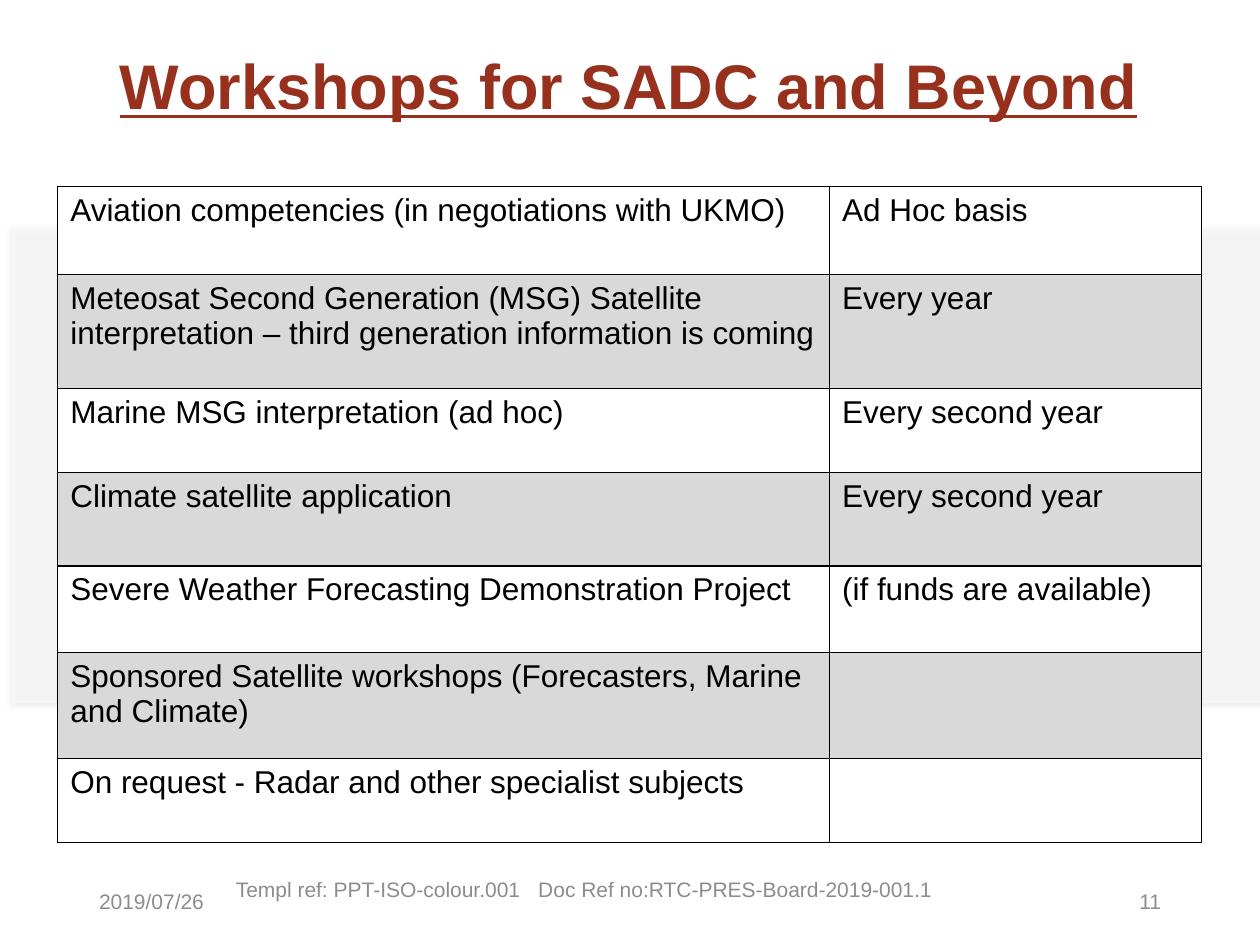
from lxml import etree
from pptx import Presentation
from pptx.dml.color import RGBColor
from pptx.enum import shapes, text
from pptx.oxml import ns, parse_xml
from pptx.util import Pt

TITLE = "Workshops for SADC and Beyond"
WORKSHOPS = [  # workshop, frequency, row height
    ("Aviation competencies (in negotiations with UKMO)", "Ad Hoc basis", 50.5),
    ("Meteosat Second Generation (MSG) Satellite interpretation"
     " – third generation information is coming", "Every year", 65),
    ("Marine MSG interpretation (ad hoc)", "Every second year", 48),
    ("Climate satellite application", "Every second year", 53.5),
    ("Severe Weather Forecasting Demonstration Project",
     "(if funds are available)", 49.5),
    ("Sponsored Satellite workshops (Forecasters, Marine and Climate)", "", 60.5),
    ("On request - Radar and other specialist subjects", "", 48),
]
COLUMNS = (441, 212.5)
BANDS = ("FFFFFF", "D9D9D9")
LEFT, CENTER, RIGHT = (text.PP_ALIGN.LEFT, text.PP_ALIGN.CENTER,
                       text.PP_ALIGN.RIGHT)
FOOTERS = [  # text pieces, left, top, width, alignment
    (["2019/07/26"], 49.5, 500.5, 162, LEFT),
    (["Templ ref: PPT-ISO-colour.001", "Doc Ref no:RTC-PRES-Board-2019-001.1"],
     121, 493.5, 425.5, CENTER),
    (["11"], 508.5, 500.5, 162, RIGHT),
]
PIECE_GAP = 6.7  # points added to the space between two footer pieces
SHADOW = (
    f'<a:effectLst {ns.nsdecls("a")}>'
    '<a:outerShdw blurRad="39370" dist="22860" dir="5400000" rotWithShape="0">'
    '<a:srgbClr val="808080"><a:alpha val="35000"/></a:srgbClr>'
    '</a:outerShdw></a:effectLst>')


def color(value):
    return RGBColor.from_string(value)


def format_font(font, size, shade, **values):
    font.color.rgb = color(shade)
    for name, value in dict(values, size=Pt(size), name="Arial").items():
        setattr(font, name, value)


def place(shape, left, top, width, height):
    for name, value in zip(("left", "top", "width", "height"),
                           (left, top, width, height)):
        setattr(shape, name, Pt(value))


def add_panel(page):
    panel = page.shapes.add_shape(shapes.MSO_SHAPE.RECTANGLE, Pt(6.5), Pt(129),
                                  Pt(720), Pt(273))
    panel.fill.solid()
    panel.fill.fore_color.rgb = color("FFFFFF")
    panel.line.fill.background()
    properties = panel._element.spPr
    fill = properties.find(ns.qn("a:solidFill"))
    etree.SubElement(fill[0], ns.qn("a:alpha"), val="38000")
    properties.append(parse_xml(SHADOW))


def add_title(page):
    title = page.shapes.title
    place(title, 49, 8.5, 620.5, 65.5)
    title.text_frame.text = TITLE
    title.text_frame.vertical_anchor = text.MSO_ANCHOR.BOTTOM
    para = title.text_frame.paragraphs[0]
    para.alignment = CENTER
    para.line_spacing = 0.9
    format_font(para.runs[0].font, 36, "97301D", bold=True, underline=True)


def add_footer(page, pieces, left, top, width, alignment):
    box = page.shapes.add_textbox(Pt(left), Pt(top), Pt(width), Pt(29))
    frame = box.text_frame
    frame.word_wrap = True
    frame.vertical_anchor = text.MSO_ANCHOR.MIDDLE
    para = frame.paragraphs[0]
    para.alignment = alignment
    for index, piece in enumerate(pieces):
        if index:
            gap = para.add_run()
            gap.text = " "
            format_font(gap.font, 12, "8C8C8C")
            gap._r.get_or_add_rPr().set("spc", str(int(PIECE_GAP * 100)))
        span = para.add_run()
        span.text = piece
        format_font(span.font, 12, "8C8C8C")


def add_borders(cell):
    """Draw a one-point black line on each side; lines precede the fill."""
    properties = cell._tc.get_or_add_tcPr()
    for index, side in enumerate(("lnL", "lnR", "lnT", "lnB")):
        properties.insert(index, parse_xml(
            f'<a:{side} {ns.nsdecls("a")} w="12700"><a:solidFill>'
            f'<a:srgbClr val="000000"/></a:solidFill></a:{side}>'))


def add_workshops(page):
    height = sum(row[-1] for row in WORKSHOPS)
    table = page.shapes.add_table(len(WORKSHOPS), len(COLUMNS), Pt(33), Pt(106.5),
                                  Pt(sum(COLUMNS)), Pt(height)).table
    for name in ("first_row", "horz_banding"):
        setattr(table, name, False)
    for column, width in zip(table.columns, COLUMNS):
        column.width = Pt(width)
    for index, (*words, row_height) in enumerate(WORKSHOPS):
        table.rows[index].height = Pt(row_height)
        for cell, wording in zip(table.rows[index].cells, words):
            cell.fill.solid()
            cell.fill.fore_color.rgb = color(BANDS[index % 2])
            add_borders(cell)
            if wording:
                cell.text = wording
                span = cell.text_frame.paragraphs[0].runs[0]
                format_font(span.font, 18, "000000")


def main():
    deck = Presentation()
    deck.slide_width, deck.slide_height = Pt(720), Pt(540)
    page = deck.slides.add_slide(deck.slide_layouts[5])
    add_panel(page)
    add_title(page)
    for footer in FOOTERS:
        add_footer(page, *footer)
    add_workshops(page)
    deck.save("out.pptx")


if __name__ == "__main__":
    main()
